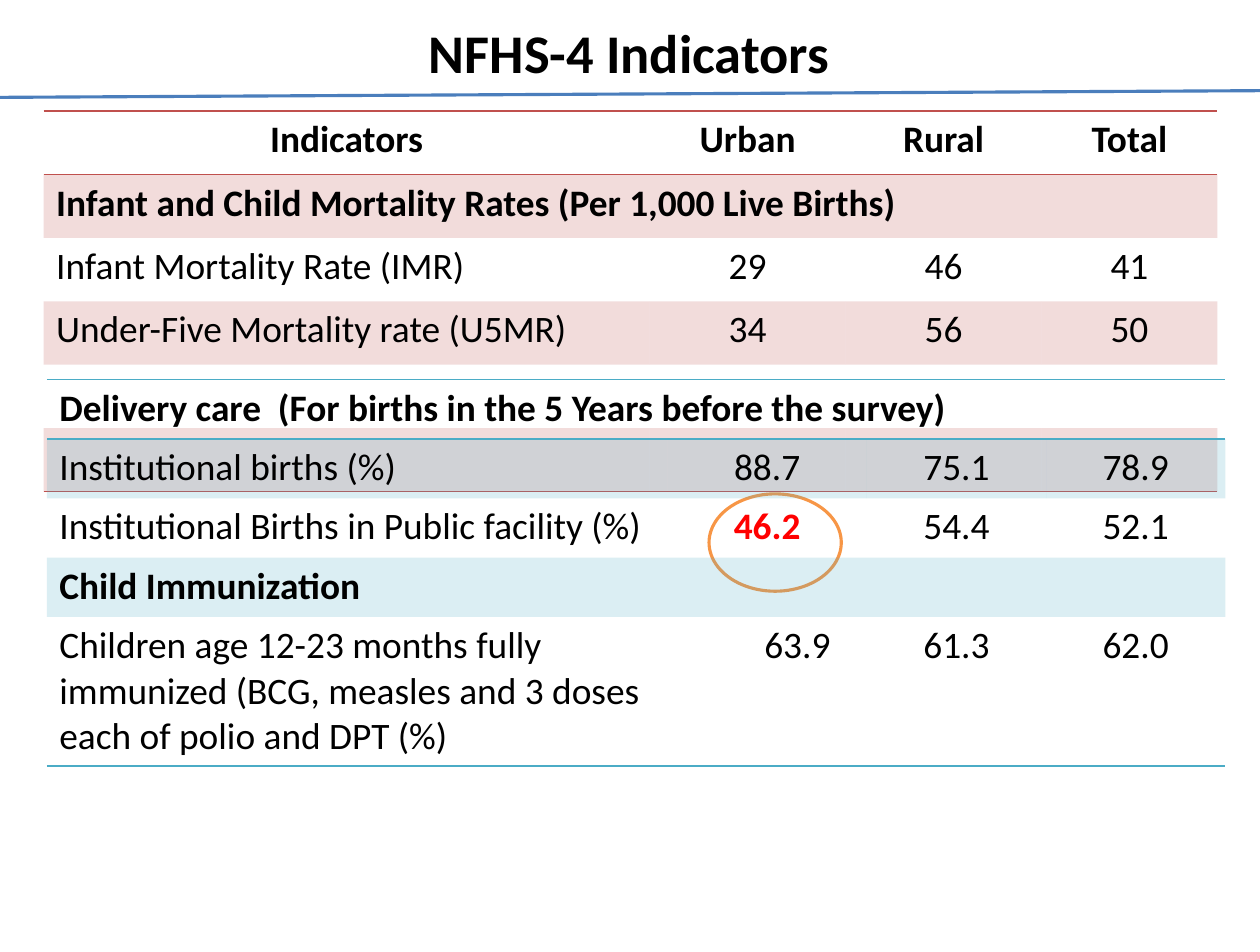
"""Build the NFHS-4 indicators slide."""
from dataclasses import dataclass

from lxml import etree
from pptx import Presentation
from pptx.dml.color import RGBColor
from pptx.enum.shapes import MSO_CONNECTOR, MSO_SHAPE
from pptx.enum.text import MSO_ANCHOR, PP_ALIGN
from pptx.oxml.ns import qn
from pptx.util import Pt

CENTER, LEFT = PP_ALIGN.CENTER, PP_ALIGN.LEFT
MIDDLE = MSO_ANCHOR.MIDDLE
STRAIGHT = MSO_CONNECTOR.STRAIGHT
OVAL = MSO_SHAPE.OVAL

COLOURS = {
    "text": "000000",
    "alert": "FF0000",
    "white": "FFFFFF",
    "red": "C0504D",
    "teal": "4BACC6",
    "orange": "F79646",
    "blue": "4B7EBC",
}
FONT = "Calibri"
PLAIN_TABLE_STYLE = "{2D5ABB26-0587-4C30-8999-92F81FD0307C}"


@dataclass
class Entry:
    text: str = ""
    span: int = 1
    bold: bool = False
    centred: bool = True
    colour: str = "text"


@dataclass
class Row:
    entries: list[Entry]
    height: float
    banded: bool = False
    edges: tuple[str, ...] = ()


@dataclass
class IndicatorTable:
    left: float
    top: float
    widths: list[float]
    accent: str
    rows: list[Row]


def label(text: str, span: int = 1, bold: bool = False) -> Entry:
    """Return a left-aligned entry."""
    return Entry(text, span, bold, centred=False)


def values(*texts: str, bold: bool = False) -> list[Entry]:
    """Return centred single-column entries."""
    return [Entry(text, bold=bold) for text in texts]


MORTALITY_HEIGHT = 40.8
CARE_HEIGHT = 38.15

MORTALITY = IndicatorTable(28.1, 71.3, [389.5, 126, 126, 113], "red", [
    Row(values("Indicators", "Urban", "Rural", "Total", bold=True),
        MORTALITY_HEIGHT, edges=("lnT", "lnB")),
    Row([label("Infant and Child Mortality Rates (Per 1,000 Live Births)", 4, True)],
        MORTALITY_HEIGHT, banded=True),
    Row([label("Infant Mortality Rate (IMR)"), *values("29", "46", "41")],
        MORTALITY_HEIGHT),
    Row([label("Under-Five Mortality rate (U5MR)"), *values("34", "56", "50")],
        MORTALITY_HEIGHT, banded=True),
    Row(values("", "", "", ""), MORTALITY_HEIGHT),
    Row(values("", "", "", ""), MORTALITY_HEIGHT, banded=True, edges=("lnB",)),
])

CARE = IndicatorTable(30.2, 244.1, [398.9, 38.9, 89.3, 115.2, 115.2], "teal", [
    Row([label("Delivery care  (For births in the 5 Years before the survey)", 5, True)],
        CARE_HEIGHT, edges=("lnT", "lnB")),
    Row([label("Institutional births (%)"), Entry("88.7", 2), *values("75.1", "78.9")],
        CARE_HEIGHT, banded=True),
    Row([label("Institutional Births in Public facility (%)"),
         Entry("46.2", 2, True, colour="alert"), *values("54.4", "52.1")], CARE_HEIGHT),
    Row([label("Child Immunization", 5, True)], CARE_HEIGHT, banded=True),
    Row([label("Children age 12-23 months fully immunized (BCG, measles and 3 doses "
               "each of polio and DPT (%)", 2), *values("63.9", "61.3", "62.0")],
        94.3, edges=("lnB",)),
])


def rgb(name: str) -> RGBColor:
    """Look up a named colour."""
    return RGBColor.from_string(COLOURS[name])


def add_run(paragraph, text: str, size: float, bold: bool, colour: str = "text") -> None:
    """Add one formatted run."""
    run = paragraph.add_run()
    run.text = text
    run.font.name = FONT
    run.font.size = Pt(size)
    run.font.bold = bold
    run.font.color.rgb = rgb(colour)


def style_cell(cell, row: Row, accent: str) -> None:
    """Set the borders, fill and margins of a cell."""
    properties = cell._tc.get_or_add_tcPr()
    for edge in row.edges:
        line = etree.SubElement(properties, qn(f"a:{edge}"), w=str(Pt(1)))
        fill = etree.SubElement(line, qn("a:solidFill"))
        etree.SubElement(fill, qn("a:srgbClr"), val=COLOURS[accent])
    if row.banded:
        cell.fill.solid()
        cell.fill.fore_color.rgb = rgb(accent)
        colour = properties.find(f"{qn('a:solidFill')}/{qn('a:srgbClr')}")
        etree.SubElement(colour, qn("a:alpha"), val="20000")
    else:
        cell.fill.background()
    cell.margin_left = cell.margin_right = Pt(8)
    cell.margin_top = cell.margin_bottom = Pt(4)


def add_indicator_table(slide, data: IndicatorTable) -> None:
    """Draw one indicator table."""
    frame = slide.shapes.add_table(
        len(data.rows), len(data.widths), Pt(data.left), Pt(data.top),
        Pt(sum(data.widths)), Pt(sum(row.height for row in data.rows)))
    table = frame.table
    table.first_row = table.horz_banding = False
    table._tbl.tblPr.find(qn("a:tableStyleId")).text = PLAIN_TABLE_STYLE
    for column, width in zip(table.columns, data.widths):
        column.width = Pt(width)
    for row_index, row in enumerate(data.rows):
        table.rows[row_index].height = Pt(row.height)
        for cell in table.rows[row_index].cells:
            style_cell(cell, row, data.accent)
        column_index = 0
        for entry in row.entries:
            cell = table.cell(row_index, column_index)
            column_index += entry.span
            if entry.span > 1:
                cell.merge(table.cell(row_index, column_index - 1))
            if entry.text:
                paragraph = cell.text_frame.paragraphs[0]
                paragraph.alignment = CENTER if entry.centred else LEFT
                add_run(paragraph, entry.text, 24, entry.bold, entry.colour)


def add_highlight(slide) -> None:
    """Draw the ring around the highlighted value."""
    ring = slide.shapes.add_shape(OVAL, Pt(455.8), Pt(317.5), Pt(85), Pt(62.6))
    ring.shadow.inherit = False
    ring.fill.solid()
    ring.fill.fore_color.rgb = rgb("white")
    ring.line.color.rgb = rgb("orange")
    ring.line.width = Pt(2)


def add_title(slide, text: str) -> None:
    """Place and format the title."""
    title = slide.shapes.title
    title.left, title.top, title.width, title.height = Pt(40.3), Pt(2.2), Pt(728.6), Pt(62)
    title.text_frame.vertical_anchor = MIDDLE
    paragraph = title.text_frame.paragraphs[0]
    paragraph.alignment = CENTER
    add_run(paragraph, text, 35, True)


def add_rule(slide) -> None:
    """Draw the line below the title."""
    rule = slide.shapes.add_connector(STRAIGHT, Pt(0), Pt(62.6), Pt(810), Pt(58.3))
    rule.line.color.rgb = rgb("blue")
    rule.line.width = Pt(2)
    etree.SubElement(rule._element.spPr, qn("a:effectLst"))


def main() -> None:
    """Build and save the presentation."""
    presentation = Presentation()
    presentation.slide_width, presentation.slide_height = Pt(810), Pt(612)
    slide = presentation.slides.add_slide(presentation.slide_layouts[5])
    add_title(slide, "NFHS-4 Indicators")
    add_highlight(slide)
    add_indicator_table(slide, MORTALITY)
    add_rule(slide)
    add_indicator_table(slide, CARE)
    presentation.save("out.pptx")


if __name__ == "__main__":
    main()
